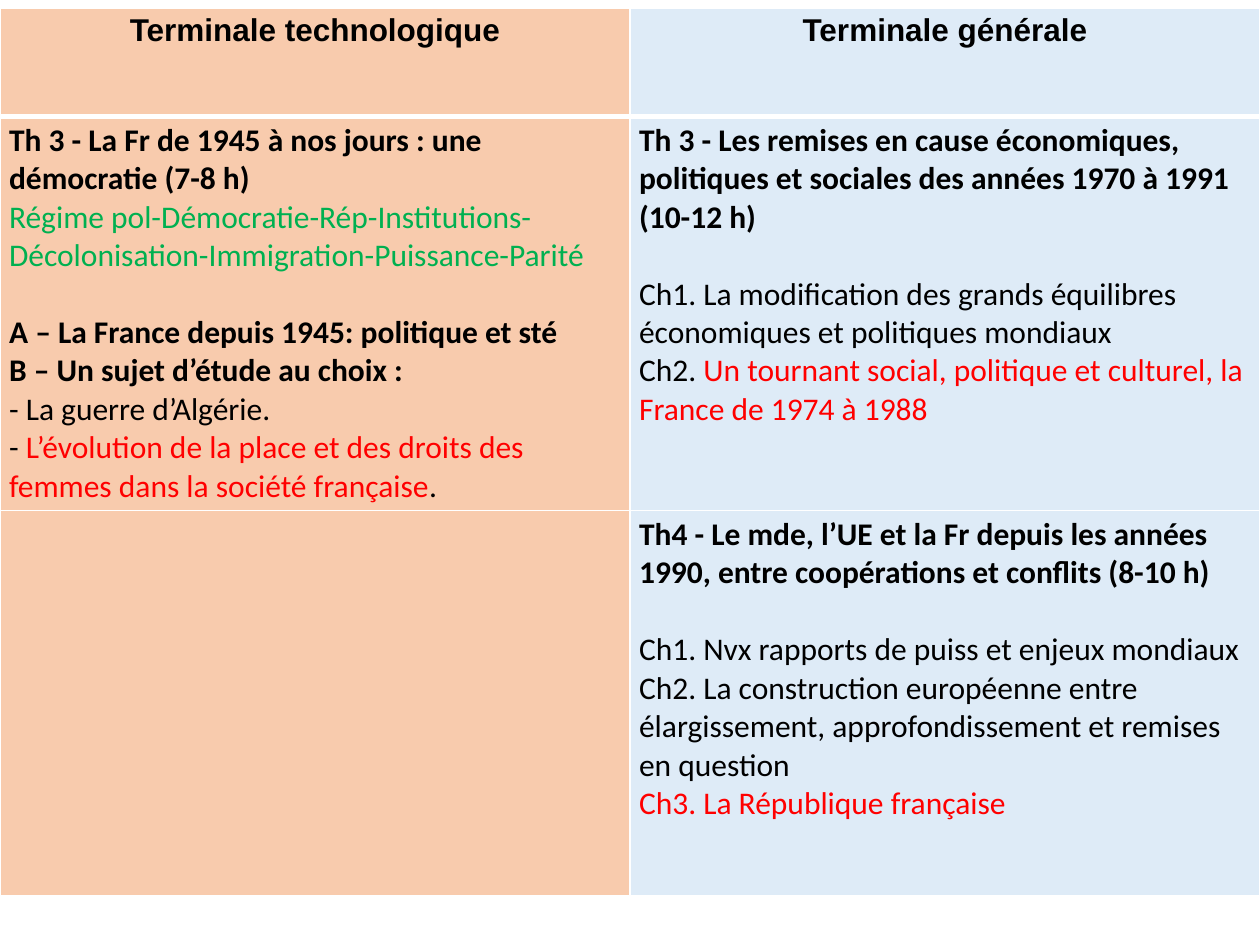
from dataclasses import dataclass

from lxml.etree import SubElement
from pptx import Presentation
from pptx.dml.color import RGBColor as Color
from pptx.enum.text import PP_ALIGN as Align
from pptx.oxml.ns import qn
from pptx.util import Pt


@dataclass(frozen=True)
class Theme:
    black: str = "000000"
    red: str = "FF0000"
    green: str = "00B050"
    white: str = "FFFFFF"
    orange: str = "F8CBAD"
    blue: str = "DEEBF7"
    heading_font: str = "Arial"
    body_font: str = "Calibri"
    size: float = 18
    gap: float = 22


theme = Theme()


def add_span(para, text, *, color=theme.black, bold=False, font=theme.body_font):
    span = para.add_run()
    span.text = text
    span.font.name = font
    span.font.size = Pt(theme.size)
    span.font.bold = bold
    span.font.color.rgb = Color.from_string(color)


def add_border(cell, side, width):
    line = SubElement(cell._tc.get_or_add_tcPr(), qn(f"a:{side}"), w=str(Pt(width)))
    fill = SubElement(line, qn("a:solidFill"))
    SubElement(fill, qn("a:srgbClr"), val=theme.white)


bold = {"bold": True}
red = {"color": theme.red}
green = {"color": theme.green}
heading = {"bold": True, "font": theme.heading_font}

header = [
    [(False, [("Terminale technologique", heading)])],
    [(False, [("Terminale générale", heading)])],
]
theme_three = [
    [
        (False, [("Th 3 - La Fr de 1945 à nos jours : une démocratie (7-8 h)", bold)]),
        (False, [("Régime pol-Démocratie-Rép-Institutions-Décolonisation-Immigration-Puissance-Parité", green)]),
        (True, [("A – La France depuis 1945: politique et sté", bold)]),
        (False, [("B – Un sujet d’étude au choix :", bold)]),
        (False, [("- La guerre d’Algérie.", {})]),
        (False, [
            ("- ", {}),
            ("L’évolution de la place et des droits des femmes dans la société française", red),
            (".", {}),
        ]),
    ],
    [
        (False, [("Th 3 - Les remises en cause économiques, politiques et sociales des années 1970 à 1991 (10-12 h)", bold)]),
        (True, [("Ch1. La modification des grands équilibres économiques et politiques mondiaux", {})]),
        (False, [
            ("Ch2. ", {}),
            ("Un tournant social, politique et culturel, la France de 1974 à 1988", red),
        ]),
    ],
]
theme_four = [
    [],
    [
        (False, [("Th4 - Le mde, l’UE et la Fr depuis les années 1990, entre coopérations et conflits (8-10 h)", bold)]),
        (True, [("Ch1. Nvx rapports de puiss et enjeux mondiaux", {})]),
        (False, [("Ch2. La construction européenne entre élargissement, approfondissement et remises en question", {})]),
        (False, [("Ch3. La République française", red)]),
    ],
]
rows = [header, theme_three, theme_four]
row_heights = [62, 220, 220]
column_fills = [theme.orange, theme.blue]

deck = Presentation()
deck.slide_width, deck.slide_height = Pt(720), Pt(540)
page = deck.slides.add_slide(deck.slide_layouts[6])

frame = page.shapes.add_table(3, 2, Pt(0), Pt(4.5), Pt(720), Pt(sum(row_heights)))
table = frame.table
table.horz_banding = False
for column in table.columns:
    column.width = Pt(360)

for row_index, (row, height) in enumerate(zip(rows, row_heights)):
    table.rows[row_index].height = Pt(height)
    for column_index, (paragraphs, fill) in enumerate(zip(row, column_fills)):
        cell = table.cell(row_index, column_index)
        cell.margin_left = cell.margin_right = Pt(5.2)
        cell.margin_top = cell.margin_bottom = Pt(2.8)
        top = 3 if row_index == 1 else 1
        bottom = 3 if row_index == 0 else 1
        for side, width in (("lnL", 1), ("lnR", 1), ("lnT", top), ("lnB", bottom)):
            add_border(cell, side, width)
        cell.fill.solid()
        cell.fill.fore_color.rgb = Color.from_string(fill)

        box = cell.text_frame
        for index, (spaced, spans) in enumerate(paragraphs):
            para = box.add_paragraph() if index else box.paragraphs[0]
            para.alignment = Align.CENTER if row_index == 0 else Align.LEFT
            if spaced:
                para.space_before = Pt(theme.gap)
            for text, style in spans:
                add_span(para, text, **style)

deck.save("out.pptx")
